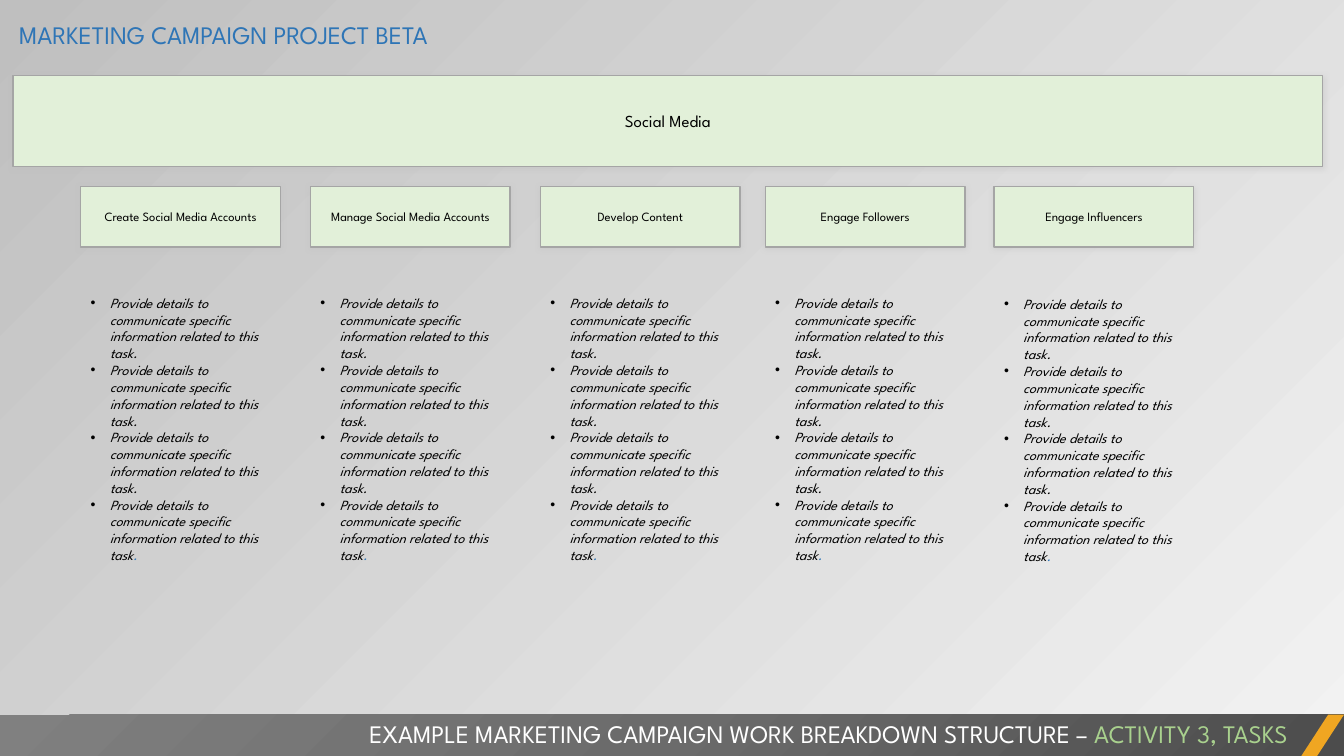
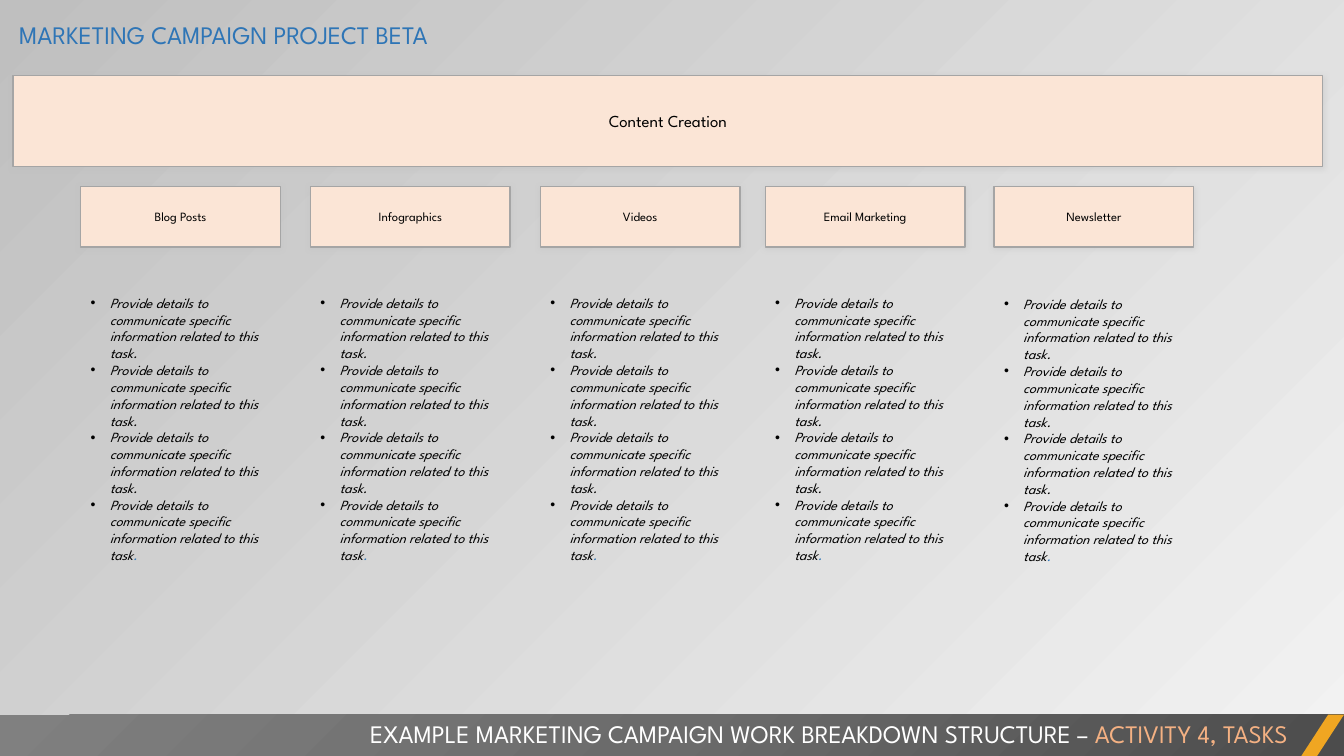
from pptx import Presentation
from pptx.dml.color import RGBColor
from pptx.enum.shapes import MSO_SHAPE
from pptx.enum.text import MSO_ANCHOR, MSO_AUTO_SIZE, PP_ALIGN
from pptx.oxml import parse_xml
from pptx.oxml.ns import nsdecls, qn
from pptx.util import Inches, Pt

FONT = "League Spartan"
BLACK, WHITE, BLUE = "000000", "FFFFFF", "2E75B6"
BORDER, SHADOW, ACCENT = "A5A5A5", "BFBFBF", "F0A622"
BACKGROUND_STOPS = [(0, "F2F2F2"), (1, "BFBFBF")]
FOOTER_STOPS = [(0, "4C4C4C"), (50, "6B6B6B"), (100, "808080")]

TITLE = "MARKETING CAMPAIGN PROJECT BETA"
FOOTER = "EXAMPLE MARKETING CAMPAIGN WORK BREAKDOWN STRUCTURE – "
DETAIL = "Provide details to communicate specific information related to this task"
DETAIL_COUNT = 4
COLUMNS = [(0.8, 2.87), (3.08, 2.87), (5.36, 2.87), (7.59, 2.87), (9.86, 2.88)]
COLUMN_WIDTH = 1.98

ACTIVITIES = [
    {
        "name": "Social Media",
        "label": "ACTIVITY 3, TASKS",
        "fill": "E2F0D9",
        "label_color": "A9D18E",
        "tasks": [
            "Create Social Media Accounts",
            "Manage Social Media Accounts",
            "Develop Content",
            "Engage Followers",
            "Engage Influencers",
        ],
    },
    {
        "name": "Content Creation",
        "label": "ACTIVITY 4, TASKS",
        "fill": "FBE5D6",
        "label_color": "F4B183",
        "tasks": ["Blog Posts", "Infographics", "Videos", "Email Marketing", "Newsletter"],
    },
]


def rgb(color):
    return RGBColor.from_string(color)


def write(paragraph, runs, size, color, italic=None):
    font = paragraph.font
    font.name, font.size, font.italic = FONT, Pt(size), italic
    font.color.rgb = rgb(color)
    for text, run_color in runs:
        run = paragraph.add_run()
        run.text = text
        if run_color != color:
            run.font.color.rgb = rgb(run_color)


def add_plain_shape(slide, kind, box, fill=None):
    shape = slide.shapes.add_shape(kind, *map(Inches, box))
    shape.shadow.inherit = False
    shape.line.fill.background()
    if fill:
        shape.fill.solid()
        shape.fill.fore_color.rgb = rgb(fill)
    return shape


def add_card(slide, box, text, size, fill):
    card = add_plain_shape(slide, MSO_SHAPE.RECTANGLE, box, fill)
    card.line.color.rgb = rgb(BORDER)
    card.line.width = Pt(1)
    card._element.spPr.find(qn("a:effectLst")).append(parse_xml(
        f'<a:outerShdw {nsdecls("a")} blurRad="{Pt(4)}" dist="{Pt(1)}" dir="5400000" '
        f'algn="t" rotWithShape="0"><a:srgbClr val="{SHADOW}">'
        '<a:alpha val="40000"/></a:srgbClr></a:outerShdw>'))
    card.text_frame.word_wrap = True
    card.text_frame.vertical_anchor = MSO_ANCHOR.MIDDLE
    paragraph = card.text_frame.paragraphs[0]
    paragraph.alignment = PP_ALIGN.CENTER
    write(paragraph, [(text, BLACK)], size, BLACK)


def add_text_frame(slide, box):
    frame = slide.shapes.add_textbox(*map(Inches, box)).text_frame
    frame.word_wrap = True
    frame.auto_size = MSO_AUTO_SIZE.SHAPE_TO_FIT_TEXT
    return frame


def add_details(slide, left, top):
    frame = add_text_frame(slide, (left, top, COLUMN_WIDTH, 3))
    for index in range(DETAIL_COUNT):
        paragraph = frame.add_paragraph() if index else frame.paragraphs[0]
        last = index == DETAIL_COUNT - 1
        runs = [(DETAIL, BLACK), (".", BLUE)] if last else [(DETAIL + ".", BLACK)]
        write(paragraph, runs, 10, BLACK, italic=True)
        properties = paragraph._p.get_or_add_pPr()
        properties.set("marL", str(Inches(0.19)))
        properties.set("indent", str(-Inches(0.19)))
        properties.insert(0, parse_xml(f'<a:buFont {nsdecls("a")} typeface="Arial"/>'))
        properties.insert(1, parse_xml(f'<a:buChar {nsdecls("a")} char="•"/>'))


def paint_background(slide):
    fill = slide.background.fill
    fill.gradient()
    fill.gradient_angle = 135
    for stop, (position, color) in zip(fill.gradient_stops, BACKGROUND_STOPS):
        stop.position = position
        stop.color.rgb = rgb(color)


def add_footer(slide, label, label_color):
    band = add_plain_shape(slide, MSO_SHAPE.RECTANGLE, (0, 7.09, 13.33, 0.42))
    band.fill.gradient()
    properties = band._element.spPr
    stops = "".join(
        f'<a:gs pos="{position * 1000}"><a:srgbClr val="{color}"/></a:gs>'
        for position, color in FOOTER_STOPS)
    properties.replace(properties.find(qn("a:gradFill")), parse_xml(
        f'<a:gradFill {nsdecls("a")} rotWithShape="1"><a:gsLst>{stops}</a:gsLst>'
        '<a:path path="circle"><a:fillToRect l="100000" t="100000"/></a:path></a:gradFill>'))
    slash = add_plain_shape(slide, MSO_SHAPE.PARALLELOGRAM, (12.9, 7.09, 0.43, 0.42), ACCENT)
    slash.adjustments[0] = 0.65
    paragraph = add_text_frame(slide, (0, 7.08, 12.87, 0.4)).paragraphs[0]
    paragraph.alignment = PP_ALIGN.RIGHT
    write(paragraph, [(FOOTER, WHITE), (label, label_color)], 18, WHITE)


def add_title(slide):
    frame = add_text_frame(slide, (0.09, 0.14, 10.11, 0.4))
    write(frame.paragraphs[0], [(TITLE, BLUE)], 18, BLUE)


def add_activity_slide(presentation, activity):
    slide = presentation.slides.add_slide(presentation.slide_layouts[6])
    paint_background(slide)
    add_card(slide, (0.13, 0.75, 12.99, 0.9), activity["name"], 12, activity["fill"])
    add_footer(slide, activity["label"], activity["label_color"])
    add_title(slide)
    for (left, top), task in zip(COLUMNS, activity["tasks"]):
        add_card(slide, (left, 1.85, COLUMN_WIDTH, 0.6), task, 9, activity["fill"])
        add_details(slide, left, top)


def main():
    """Build the task slides of the marketing work breakdown structure."""
    presentation = Presentation()
    presentation.slide_width = Inches(13.33)
    presentation.slide_height = Inches(7.5)
    for activity in ACTIVITIES:
        add_activity_slide(presentation, activity)
    presentation.save("out.pptx")


if __name__ == "__main__":
    main()
